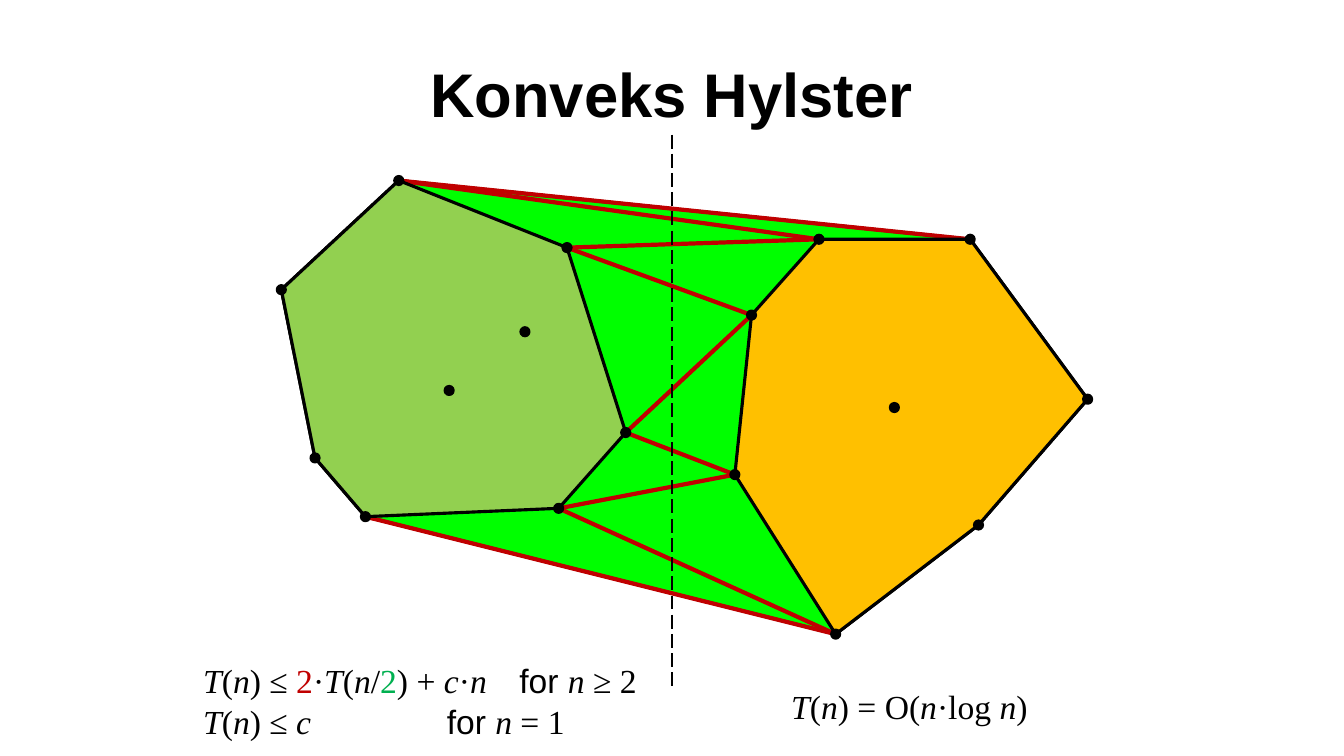
from dataclasses import dataclass
from typing import NamedTuple, Optional

from lxml.etree import SubElement
from pptx import Presentation
from pptx.dml.color import RGBColor
from pptx.enum.dml import MSO_LINE_DASH_STYLE as Dash
from pptx.enum.shapes import MSO_CONNECTOR as Connector, MSO_SHAPE as Preset
from pptx.enum.text import MSO_ANCHOR as Anchor, PP_ALIGN as Align
from pptx.oxml.ns import qn
from pptx.slide import Slide
from pptx.text.text import TextFrame
from pptx.util import Cm, Pt

COLORS = {
    "ink": "000000",
    "merged": "00FF00",
    "left": "92D050",
    "right": "FFC000",
    "bridge": "C00000",
    "half": "00B050",
}
SANS, SERIF = "Arial", "Times New Roman"
DOT_SIZE = 0.21


class Point(NamedTuple):
    x: float
    y: float


@dataclass
class Hull:
    corners: list[Point]
    color: str


class Term(NamedTuple):
    text: str
    italic: bool = False
    color: str = "ink"
    font: str = SERIF


@dataclass
class Formula:
    terms: list[Term]
    tab: Optional[float] = None


def rgb(name: str) -> RGBColor:
    return RGBColor.from_string(COLORS[name])


def draw_hull(slide: Slide, hull: Hull) -> None:
    start, *others = [(Cm(p.x), Cm(p.y)) for p in hull.corners]
    builder = slide.shapes.build_freeform(*start)
    builder.add_line_segments(others, close=True)
    outline = builder.convert_to_shape()
    outline.shadow.inherit = False
    outline.fill.solid()
    outline.fill.fore_color.rgb = rgb(hull.color)
    outline.line.color.rgb = rgb("ink")
    outline.line.width = Pt(2.25)


def draw_line(slide: Slide, start: Point, end: Point, color: str, width: float,
              dash: Optional[Dash] = None) -> None:
    line = slide.shapes.add_connector(
        Connector.STRAIGHT, Cm(start.x), Cm(start.y), Cm(end.x), Cm(end.y))
    line.line.color.rgb = rgb(color)
    line.line.width = Pt(width)
    if dash is not None:
        line.line.dash_style = dash
    SubElement(line._element.spPr, qn("a:effectLst"))


def draw_dot(slide: Slide, center: Point) -> None:
    dot = slide.shapes.add_shape(
        Preset.OVAL, Cm(center.x - DOT_SIZE / 2), Cm(center.y - DOT_SIZE / 2),
        Cm(DOT_SIZE), Cm(DOT_SIZE))
    dot.shadow.inherit = False
    dot.fill.solid()
    dot.fill.fore_color.rgb = rgb("ink")
    dot.line.color.rgb = rgb("ink")
    dot.line.width = Pt(2)


def add_text_frame(slide: Slide, left: float, top: float, width: float,
                   height: float) -> TextFrame:
    frame = slide.shapes.add_textbox(Cm(left), Cm(top), Cm(width), Cm(height)).text_frame
    frame.word_wrap = True
    return frame


def write_title(slide: Slide, text: str) -> None:
    frame = add_text_frame(slide, 1.69, 0.76, 30.48, 3.18)
    frame.vertical_anchor = Anchor.MIDDLE
    title = frame.paragraphs[0]
    title.text = text
    title.alignment = Align.CENTER
    title.font.name, title.font.size, title.font.bold = SANS, Pt(44), True
    title.font.color.rgb = rgb("ink")


def write_formulas(frame: TextFrame, formulas: list[Formula]) -> None:
    for index, formula in enumerate(formulas):
        line = frame.add_paragraph() if index else frame.paragraphs[0]
        if formula.tab is not None:
            tabs = SubElement(line._p.get_or_add_pPr(), qn("a:tabLst"))
            SubElement(tabs, qn("a:tab"), pos=str(Cm(formula.tab)), algn="l")
        line.font.size = Pt(24)
        for term in formula.terms:
            run = line.add_run()
            run.text = term.text
            run.font.name, run.font.italic = term.font, term.italic
            run.font.color.rgb = rgb(term.color)


# Corners of the two half hulls, counterclockwise from the top
LEFT = [Point(10.05, 4.55), Point(7.09, 7.3), Point(7.94, 11.54), Point(9.21, 13.02),
        Point(14.08, 12.81), Point(15.77, 10.9), Point(14.29, 6.24)]
RIGHT = [Point(20.64, 6.03), Point(18.94, 7.94), Point(18.52, 11.96), Point(21.06, 15.98),
         Point(24.66, 13.23), Point(27.41, 10.06), Point(24.45, 6.03)]
INNER = [Point(13.23, 8.36), Point(11.32, 9.84), Point(22.54, 10.27)]

# Bridges as (left corner, right corner)
BRIDGES = [(5, 2), (5, 1), (6, 1), (6, 0), (0, 0), (0, 6), (4, 2), (4, 3), (3, 3)]

# Recurrence and its solution
T, N, C = Term("T", True), Term("n", True), Term("c", True)
OPEN, DOT, AT_MOST = Term("("), Term("·"), Term(") ≤ ")
FOR = Term("\tfor ", font=SANS)
N_SPACE = Term("n ", True)
RECURRENCE = [
    Formula([T, OPEN, N, AT_MOST, Term("2", color="bridge"), DOT, T, OPEN, N, Term("/"),
             Term("2", color="half"), Term(") + "), C, DOT, N, FOR, N_SPACE, Term("≥ 2")],
            tab=7.97),
    Formula([T, OPEN, N, AT_MOST, C, FOR, N_SPACE, Term("= 1")], tab=6.14),
]
SOLUTION = [Formula([T, OPEN, N, Term(") = O("), N, Term("·log "), N, Term(")")])]


def main() -> None:
    deck = Presentation()
    deck.slide_width, deck.slide_height = Cm(33.87), Cm(19.05)
    slide = deck.slides.add_slide(deck.slide_layouts[6])

    # Merged hull, bridges and half hulls
    draw_hull(slide, Hull(LEFT[:4] + RIGHT[3:], "merged"))
    for left, right in BRIDGES:
        draw_line(slide, LEFT[left], RIGHT[right], "bridge", 3)
    for hull in (Hull(LEFT, "left"), Hull(RIGHT, "right")):
        draw_hull(slide, hull)

    write_title(slide, "Konveks Hylster")

    # Points and dividing line
    for point in LEFT + RIGHT + INNER:
        draw_dot(slide, point)
    draw_line(slide, Point(16.93, 3.39), Point(16.93, 17.36), "ink", 1.25, Dash.LONG_DASH)

    # Running time
    write_formulas(add_text_frame(slide, 4.87, 16.51, 11.64, 2.31), RECURRENCE)
    write_formulas(add_text_frame(slide, 19.69, 17.15, 6.56, 1.27), SOLUTION)

    deck.save("out.pptx")


if __name__ == "__main__":
    main()
